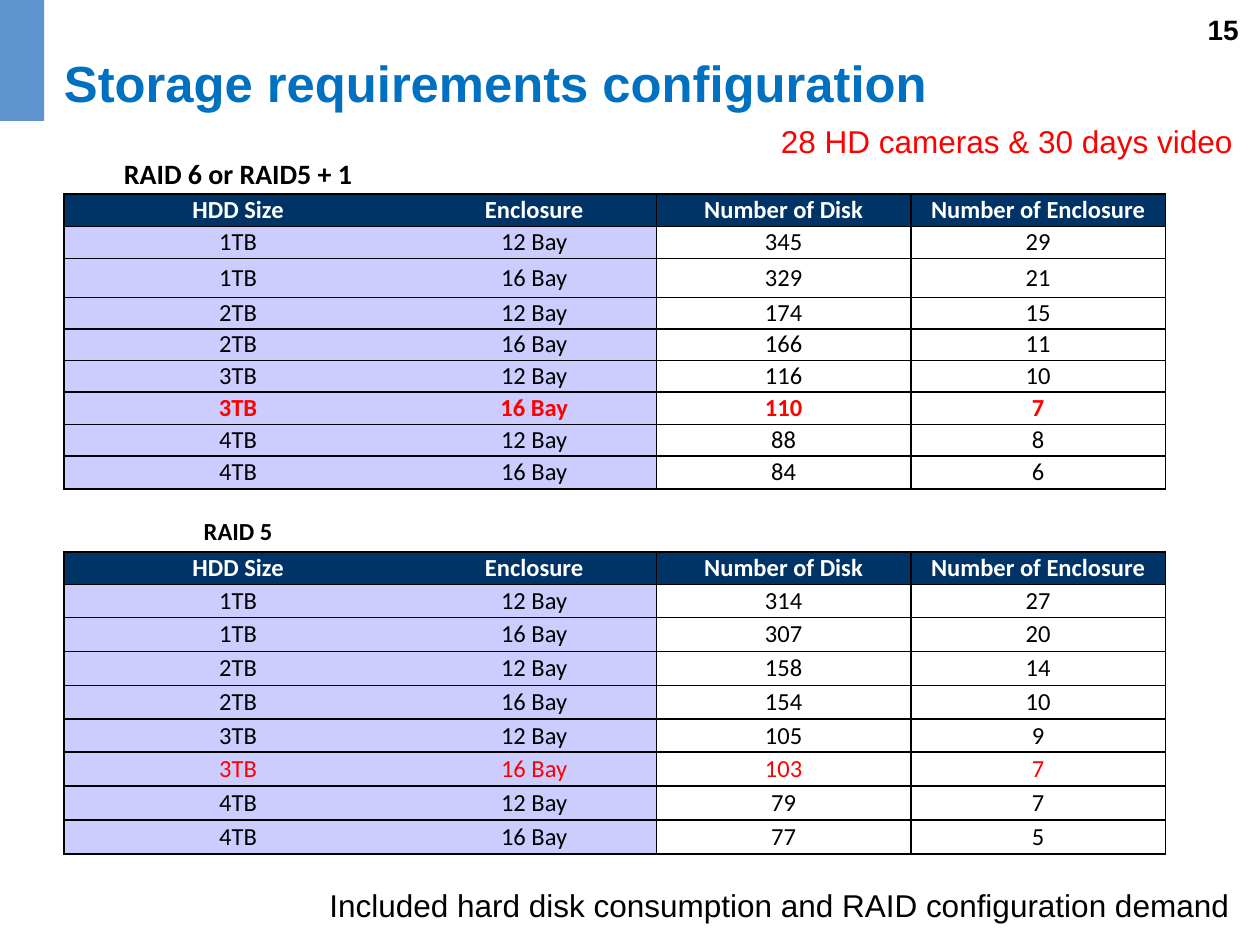
from lxml import etree
from pptx import Presentation
from pptx import util as u
from pptx.dml.color import RGBColor
from pptx.enum import shapes, text
from pptx.oxml.ns import qn

BLACK = RGBColor(0x00, 0x00, 0x00)
WHITE = RGBColor(0xFF, 0xFF, 0xFF)
RED = RGBColor(0xFF, 0x00, 0x00)
TITLE_BLUE = RGBColor(0x00, 0x70, 0xC0)
ACCENT_BLUE = RGBColor(0x60, 0x94, 0xCE)
HEADER_NAVY = RGBColor(0x00, 0x33, 0x66)
LAVENDER = RGBColor(0xCC, 0xCC, 0xFF)

LEFT, CENTER, RIGHT = (text.PP_ALIGN.LEFT, text.PP_ALIGN.CENTER,
                       text.PP_ALIGN.RIGHT)
MIDDLE = text.MSO_ANCHOR.MIDDLE
NO_GRID_STYLE = "{2D5ABB26-0587-4C30-8999-92F81FD0307C}"

COLUMN_WIDTHS = [2.76, 1.94, 2.02, 2.02]
HEADERS = ["HDD Size", "Enclosure", "Number of Disk", "Number of Enclosure"]
DISK_SIZES = ["1TB", "2TB", "3TB", "4TB"]
BAYS = ["12 Bay", "16 Bay"]
CONFIGURATIONS = [(size, bay) for size in DISK_SIZES for bay in BAYS]
CHOSEN = ("3TB", "16 Bay")

RAID6_COUNTS = [(345, 29), (329, 21), (174, 15), (166, 11),
                (116, 10), (110, 7), (88, 8), (84, 6)]
RAID5_COUNTS = [(314, 27), (307, 20), (158, 14), (154, 10),
                (105, 9), (103, 7), (79, 7), (77, 5)]
RAID6_HEIGHTS = [0.31, 0.26, 0.25, 0.31, 0.25, 0.25, 0.25, 0.26, 0.25, 0.26]
RAID5_HEIGHTS = [0.32, 0.26, 0.26, 0.27, 0.27, 0.27, 0.26, 0.27, 0.27, 0.27]


class SlideBuilder:
    heading_font = "Arial"
    table_font = "Calibri"
    table_size = 14

    def __init__(self, slide):
        self.s = slide

    def add_run(self, p, words, font, size, color, bold=False):
        r = p.add_run()
        r.text = words
        r.font.name = font
        r.font.size = u.Pt(size)
        r.font.bold = bold
        r.font.color.rgb = color

    def add_text(self, words, box, size, color, bold=False, align=CENTER,
                 wrap=True, anchor=text.MSO_ANCHOR.TOP, spacing=None):
        sp = self.s.shapes.add_textbox(*map(u.Inches, box))
        tf = sp.text_frame
        tf.word_wrap = wrap
        tf.vertical_anchor = anchor
        p = tf.paragraphs[0]
        p.alignment = align
        p.line_spacing = spacing
        self.add_run(p, words, self.heading_font, size, color, bold)

    def add_bar(self, box, color):
        sp = self.s.shapes.add_shape(shapes.MSO_SHAPE.RECTANGLE,
                                     *map(u.Inches, box))
        sp.shadow.inherit = False
        sp.fill.solid()
        sp.fill.fore_color.rgb = color
        sp.line.fill.background()

    def set_borders(self, cell, sides):
        """Draw black 1 pt lines on the sides, given in the order L, R, T, B."""
        tc_pr = cell._tc.get_or_add_tcPr()
        for side in sides:
            ln = etree.SubElement(tc_pr, qn("a:ln" + side), w=str(u.Pt(1)))
            fill = etree.SubElement(ln, qn("a:solidFill"))
            etree.SubElement(fill, qn("a:srgbClr"), val=str(BLACK))

    def fill_cell(self, cell, words, sides, fill=None, color=BLACK,
                  bold=False, size=table_size):
        cell.margin_left = cell.margin_right = 0
        cell.margin_top = cell.margin_bottom = 0
        cell.vertical_anchor = MIDDLE
        self.set_borders(cell, sides)
        if fill is None:
            cell.fill.background()
        else:
            cell.fill.solid()
            cell.fill.fore_color.rgb = fill
        if words:
            p = cell.text_frame.paragraphs[0]
            p.alignment = CENTER
            self.add_run(p, words, self.table_font, size, color, bold)

    def add_raid_table(self, caption, caption_size, top, heights, counts,
                       chosen_bold):
        """Caption row, header row, then one ruled pair of rows per disk size."""
        frame = self.s.shapes.add_table(
            len(heights), len(COLUMN_WIDTHS), u.Inches(0.51), u.Inches(top),
            u.Inches(sum(COLUMN_WIDTHS)), u.Inches(sum(heights)))
        table = frame.table
        table._tbl.tblPr.find(qn("a:tableStyleId")).text = NO_GRID_STYLE
        table.first_row = table.horz_banding = False
        for column, width in zip(table.columns, COLUMN_WIDTHS):
            column.width = u.Inches(width)
        for row, height in zip(table.rows, heights):
            row.height = u.Inches(height)

        for col, header in enumerate(HEADERS):
            side = "LR"[col % 2]
            self.fill_cell(table.cell(0, col), caption if col == 0 else "",
                           "B", bold=True, size=caption_size)
            self.fill_cell(table.cell(1, col), header, side + "TB",
                           HEADER_NAVY, WHITE, True)
            for i, (config, count) in enumerate(zip(CONFIGURATIONS, counts)):
                chosen = config == CHOSEN
                self.fill_cell(table.cell(i + 2, col),
                               str((config + count)[col]),
                               side + "TB"[i % 2],
                               LAVENDER if col < 2 else None,
                               RED if chosen else BLACK,
                               chosen and chosen_bold)


def main():
    prs = Presentation()
    prs.slide_width, prs.slide_height = u.Inches(10), u.Inches(7.5)
    b = SlideBuilder(prs.slides.add_slide(prs.slide_layouts[6]))

    b.add_text("15", (7.6, 0.05, 2.33, 0.52), 16, BLACK, True, RIGHT)
    b.add_text("Storage requirements configuration", (0.41, -0.02, 9, 1.25),
               29, TITLE_BLUE, True, LEFT, anchor=MIDDLE, spacing=1.2)
    b.add_raid_table("RAID 6 or RAID5 + 1", 16, 1.23, RAID6_HEIGHTS,
                     RAID6_COUNTS, chosen_bold=True)
    b.add_raid_table("RAID 5", 14, 4.06, RAID5_HEIGHTS,
                     RAID5_COUNTS, chosen_bold=False)
    b.add_text("Included hard disk consumption and RAID configuration demand",
               (2.48, 6.98, 7.41, 0.4), 18, BLACK, wrap=False)
    b.add_bar((0, -0.03, 0.35, 0.99), ACCENT_BLUE)
    b.add_text("28 HD cameras & 30 days video", (6.08, 0.92, 3.82, 0.4),
               18, RED, wrap=False)

    prs.save("out.pptx")


if __name__ == "__main__":
    main()
